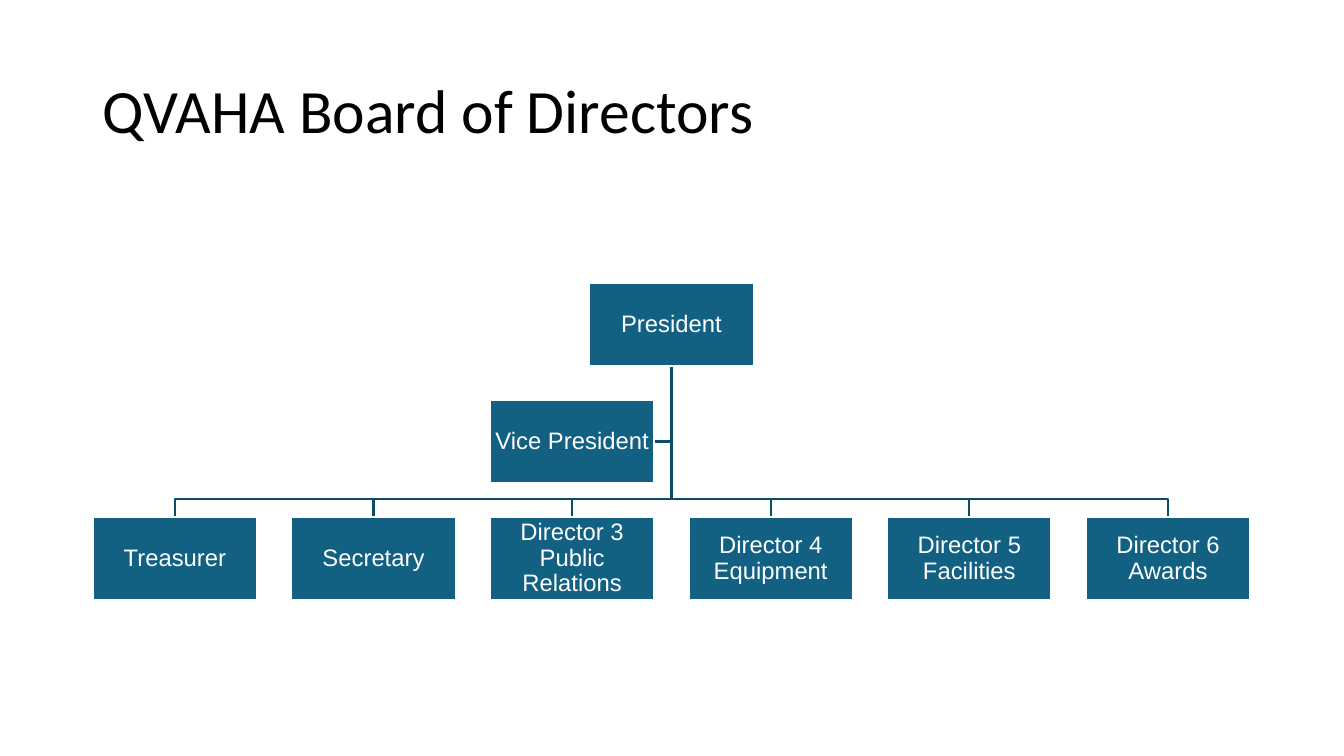
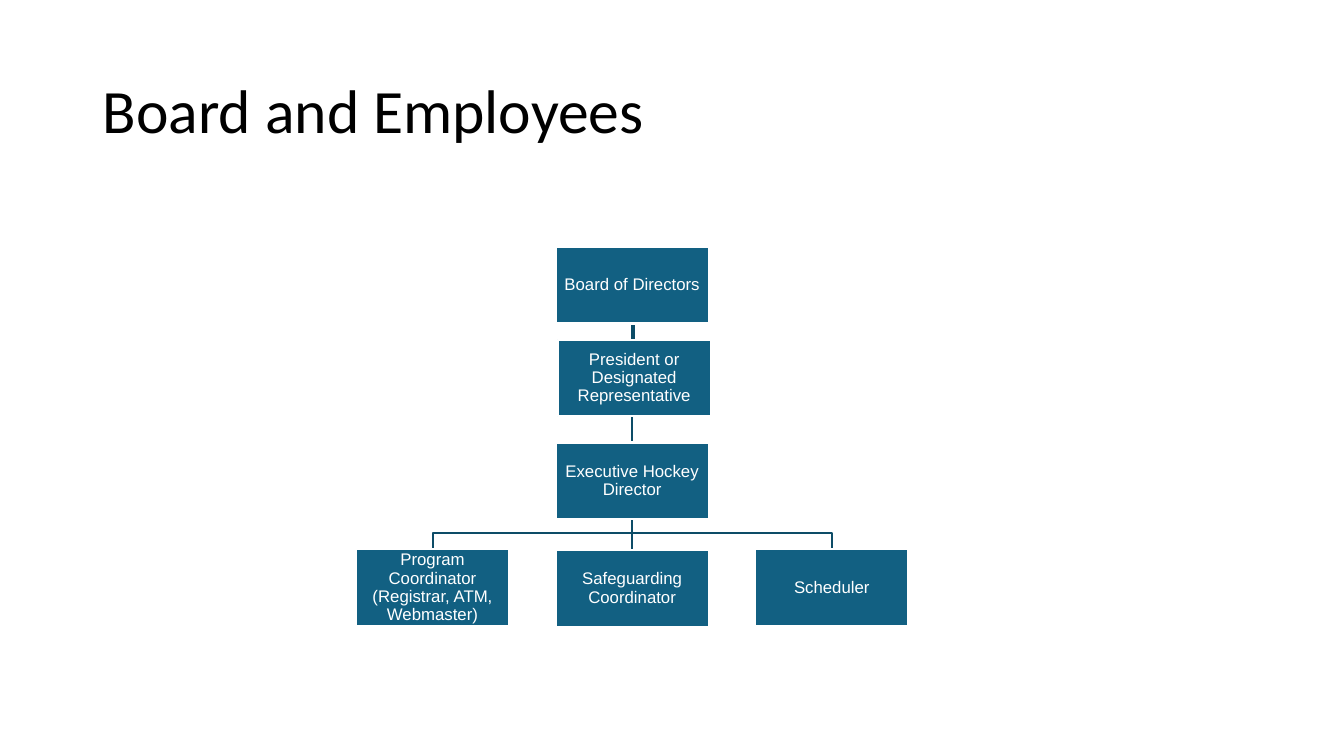
from dataclasses import dataclass

from lxml.etree import SubElement
from pptx import Presentation
from pptx.dml.color import RGBColor
from pptx.enum.shapes import MSO_CONNECTOR, MSO_SHAPE
from pptx.enum.text import MSO_ANCHOR, MSO_AUTO_SIZE, PP_ALIGN
from pptx.oxml.ns import qn
from pptx.util import Inches, Pt


@dataclass(frozen=True)
class Theme:
    box: RGBColor = RGBColor(0x12, 0x60, 0x82)
    link: RGBColor = RGBColor(0x0D, 0x4C, 0x67)
    white: RGBColor = RGBColor(0xFF, 0xFF, 0xFF)
    black: RGBColor = RGBColor(0, 0, 0)
    title_font: str = "Calibri"
    box_font: str = "Arial"
    title_size: float = 44
    line_width: float = 1.5
    line_spacing: float = 0.9
    title_area: tuple = (0.92, 0.4, 11.5, 1.45)
    box_inset: float = 0.01


@dataclass(frozen=True)
class Grid:
    left: float
    top: float
    col: float
    row: float
    width: float
    height: float
    drop: float
    size: float

    def corner(self, cell):
        return self.left + cell[0] * self.col, self.top + cell[1] * self.row

    def point(self, cell, across, down):
        x, y = self.corner(cell)
        return x + across * self.width, y + down * self.height


class OrgDeck:
    def __init__(self, theme):
        self.theme = theme
        self.prs = Presentation()
        self.prs.slide_width, self.prs.slide_height = Inches(13.33), Inches(7.5)

    def slide(self, title, grid):
        self.grid = grid
        self.s = self.prs.slides.add_slide(self.prs.slide_layouts[5])
        sp = self.s.shapes.title
        sp.left, sp.top, sp.width, sp.height = map(Inches, self.theme.title_area)
        sp.text_frame.auto_size = MSO_AUTO_SIZE.NONE
        t = self.theme
        self.text(sp, title, t.title_font, t.title_size, t.black, PP_ALIGN.LEFT)

    def text(self, sp, text, font, size, color, align):
        tf = sp.text_frame
        tf.word_wrap = True
        tf.vertical_anchor = MSO_ANCHOR.MIDDLE
        p = tf.paragraphs[0]
        p.alignment = align
        p.line_spacing = self.theme.line_spacing
        r = p.add_run()
        r.text = text
        r.font.name, r.font.size = font, Pt(size)
        r.font.color.rgb = color

    def outline(self, sp, color):
        sp.line.color.rgb = color
        sp.line.width = Pt(self.theme.line_width)

    def box(self, label, cell):
        t, g = self.theme, self.grid
        x, y = g.corner(cell)
        sp = self.s.shapes.add_shape(
            MSO_SHAPE.RECTANGLE, *map(Inches, (x, y, g.width, g.height)))
        sp.shadow.inherit = False
        sp.fill.solid()
        sp.fill.fore_color.rgb = t.box
        self.outline(sp, t.white)
        tf = sp.text_frame
        tf.margin_left = tf.margin_right = Inches(t.box_inset)
        tf.margin_top = tf.margin_bottom = Inches(t.box_inset)
        self.text(sp, label, t.box_font, g.size, t.white, PP_ALIGN.CENTER)

    def link(self, *points):
        points = [(Inches(x), Inches(y)) for x, y in points]
        start, end = points[0], points[-1]
        if start[0] == end[0]:
            sp = self.s.shapes.add_connector(MSO_CONNECTOR.STRAIGHT, *start, *end)
            SubElement(sp._element.spPr, qn("a:effectLst"))
        else:
            path = self.s.shapes.build_freeform(*start)
            path.add_line_segments(points[1:], close=False)
            sp = path.convert_to_shape()
            sp.shadow.inherit = False
            sp.fill.background()
        self.outline(sp, self.theme.link)

    def link_down(self, parent, child):
        x, y = self.grid.point(parent, 0.5, 1)
        end_x, end_y = self.grid.point(child, 0.5, 0)
        bus = end_y - self.grid.drop
        self.link((x, y), (x, bus), (end_x, bus), (end_x, end_y))

    def link_side(self, parent, assistant):
        x, y = self.grid.point(parent, 0.5, 1)
        end_x, end_y = self.grid.point(assistant, 1, 0.5)
        self.link((x, y), (x, end_y), (end_x, end_y))

    def tree(self, root, reports, assistants=()):
        for _, cell in assistants:
            self.link_side(root[1], cell)
        for _, cell in reports:
            self.link_down(root[1], cell)
        for label, cell in (root, *reports, *assistants):
            self.box(label, cell)


def main():
    deck = OrgDeck(Theme())

    deck.slide("QVAHA Board of Directors",
               Grid(0.92, 2.81, 1.97, 1.16, 1.63, 0.82, 0.18, 17))
    members = ["Treasurer", "Secretary", "Director 3 Public Relations",
               "Director 4 Equipment", "Director 5 Facilities", "Director 6 Awards"]
    deck.tree(("President", (2.5, 0)),
              [(name, (col, 2)) for col, name in enumerate(members)],
              [("Vice President", (2, 1))])

    deck.slide("Board and Employees",
               Grid(3.53, 2.45, 1.98, 1, 1.52, 0.76, 0.16, 12))
    deck.tree(("Board of Directors", (1, 0)), [
        ("Program Coordinator (Registrar, ATM, Webmaster)", (0, 3)),
        ("President or Designated Representative", (1.01, 0.92)),
        ("Executive Hockey Director", (1, 1.94)),
        ("Safeguarding Coordinator", (1, 3.01)),
        ("Scheduler", (2, 3)),
    ])

    deck.prs.save("out.pptx")


if __name__ == "__main__":
    main()
